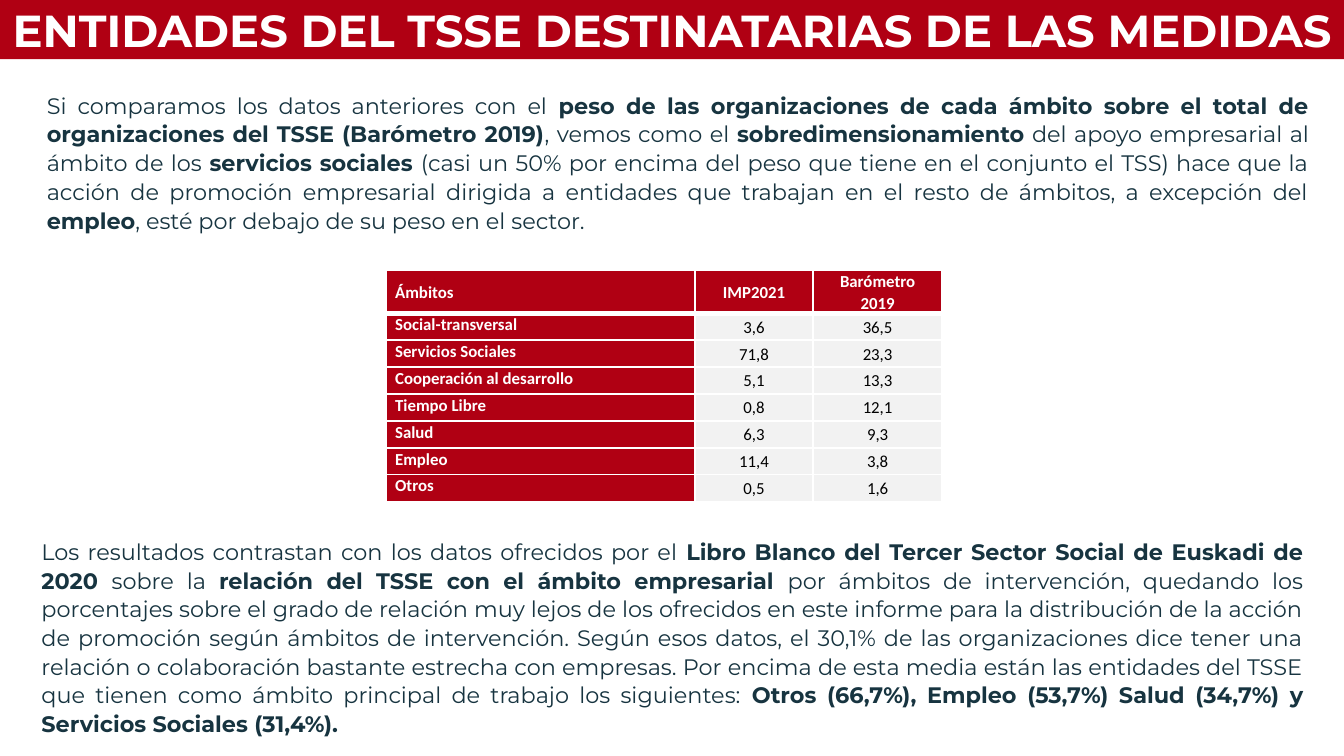
from lxml import etree
from pptx import Presentation
from pptx.dml.color import RGBColor
from pptx.enum.text import MSO_ANCHOR, MSO_AUTO_SIZE, PP_ALIGN
from pptx.oxml.ns import qn
from pptx.util import Inches, Pt

LEFT, MID, JUST = PP_ALIGN.LEFT, PP_ALIGN.CENTER, PP_ALIGN.JUSTIFY
TOP, CENTER = MSO_ANCHOR.TOP, MSO_ANCHOR.MIDDLE
FIXED = MSO_AUTO_SIZE.NONE
RED = RGBColor(0xB0, 0x00, 0x13)
NAVY = RGBColor(0x17, 0x34, 0x40)
GRAY = RGBColor(0xF2, 0xF2, 0xF2)
WHITE = RGBColor(0xFF, 0xFF, 0xFF)
BLACK = RGBColor(0x00, 0x00, 0x00)

TITLE = "ENTIDADES DEL TSSE DESTINATARIAS DE LAS MEDIDAS"
INTRO = (
    "Si comparamos los datos anteriores con el *peso de las organizaciones de cada "
    "ámbito sobre el total de organizaciones del TSSE (Barómetro 2019)*, vemos como el "
    "*sobredimensionamiento* del apoyo empresarial al ámbito de los *servicios sociales "
    "*(casi un 50% por encima del peso que tiene en el conjunto el TSS) hace que la "
    "acción de promoción empresarial dirigida a entidades que trabajan en el resto de "
    "ámbitos, a excepción del *empleo*, esté por debajo de su peso en el sector. "
)
CLOSE = (
    "Los resultados contrastan con los datos ofrecidos por el *Libro Blanco del Tercer "
    "Sector Social de Euskadi de 2020 *sobre la *relación del TSSE con el ámbito "
    "empresarial *por ámbitos de intervención, quedando los porcentajes sobre el grado "
    "de relación muy lejos de los ofrecidos en este informe para la distribución de la "
    "acción de promoción según ámbitos de intervención. Según esos datos, el 30,1% de "
    "las organizaciones dice tener una relación o colaboración bastante estrecha con "
    "empresas. Por encima de esta media están las entidades del TSSE que tienen como "
    "ámbito principal de trabajo los siguientes: *Otros (66,7%), Empleo (53,7%) Salud "
    "(34,7%) y Servicios Sociales (31,4%).*"
)
ROWS = [
    ("Ámbitos", "IMP2021", "Barómetro 2019"),
    ("Social-transversal", "3,6", "36,5"),
    ("Servicios Sociales", "71,8", "23,3"),
    ("Cooperación al desarrollo", "5,1", "13,3"),
    ("Tiempo Libre", "0,8", "12,1"),
    ("Salud", "6,3", "9,3"),
    ("Empleo", "11,4", "3,8"),
    ("Otros", "0,5", "1,6"),
]
COLS = (2.3, 0.88, 0.96)


def write(frame, text, size=12, font="Montserrat", color=NAVY, bold=False,
          align=JUST, line=1.07, before=0, after=8):
    """Fill a frame with one paragraph; asterisks switch bold on and off."""
    para = frame.paragraphs[0]
    para.alignment, para.line_spacing = align, line
    para.space_before, para.space_after = Pt(before), Pt(after)
    for i, part in enumerate(text.split("*")):
        if part:
            run = para.add_run()
            run.text = part
            run.font.name, run.font.size = font, Pt(size)
            run.font.bold = bold or i % 2 == 1
            run.font.color.rgb = color


def place(shape, box):
    """Move a shape to a box given in inches."""
    shape.left, shape.top, shape.width, shape.height = map(Inches, box)


def add_title(slide, box):
    """Turn the title placeholder into the red band."""
    title = slide.shapes.title
    place(title, box)
    title.fill.solid()
    title.fill.fore_color.rgb = RED
    frame = title.text_frame
    frame.word_wrap, frame.auto_size = True, FIXED
    frame.vertical_anchor = CENTER
    frame.margin_left = frame.margin_right = Inches(0.04)
    frame.margin_top = frame.margin_bottom = Inches(0.02)
    write(frame, TITLE, size=24, color=WHITE, bold=True, align=MID, line=1, after=0)


def add_text(slide, box, text, **style):
    """Add a wrapped block of body text."""
    frame = slide.shapes.add_textbox(*map(Inches, box)).text_frame
    frame.word_wrap = True
    write(frame, text, **style)


def add_edges(cell, base):
    """Draw white borders around a cell, with its own width at the base."""
    props = cell._tc.get_or_add_tcPr()
    for i, side in enumerate(("lnL", "lnR", "lnT", "lnB")):
        width = base if side == "lnB" else 1
        edge = etree.Element(qn("a:" + side), w=str(Pt(width)))
        fill = etree.SubElement(edge, qn("a:solidFill"))
        etree.SubElement(fill, qn("a:srgbClr"), val=str(WHITE))
        props.insert(i, edge)


def add_cell(cell, text, row, col):
    """Format one cell as a heading or a value."""
    head = row == 0 or col == 0
    cell.fill.solid()
    cell.fill.fore_color.rgb = RED if head else GRAY
    cell.margin_left = cell.margin_right = Inches(0.07)
    cell.margin_top = cell.margin_bottom = 0
    cell.vertical_anchor = TOP if row and not col else CENTER
    add_edges(cell, 3 if row == 0 else 1)
    write(cell.text_frame, text, size=9, font="Calibri", bold=head,
          color=WHITE if head else BLACK, align=MID if col else LEFT)


def add_grid(slide, box):
    """Add the table that compares both sources by field."""
    grid = slide.shapes.add_table(len(ROWS), len(COLS), *map(Inches, box)).table
    for col, width in zip(grid.columns, COLS):
        col.width = Inches(width)
    for r, texts in enumerate(ROWS):
        grid.rows[r].height = Inches(0.2 if r else 0.18)
        for c, text in enumerate(texts):
            add_cell(grid.cell(r, c), text, r, c)


def main():
    """Build and save the slide."""
    deck = Presentation()
    deck.slide_width = Inches(10)
    deck.slide_height = deck.slide_width * 9 // 16
    slide = deck.slides.add_slide(deck.slide_layouts[5])
    add_title(slide, (0, 0, 10, 0.44))
    add_text(slide, (0.25, 0.62, 9.59, 1.17), INTRO, before=6, after=6)
    add_grid(slide, (2.87, 2.01, 4.14, 1.72))
    add_text(slide, (0.21, 3.94, 9.59, 1.4), CLOSE)
    deck.save("out.pptx")


if __name__ == "__main__":
    main()
